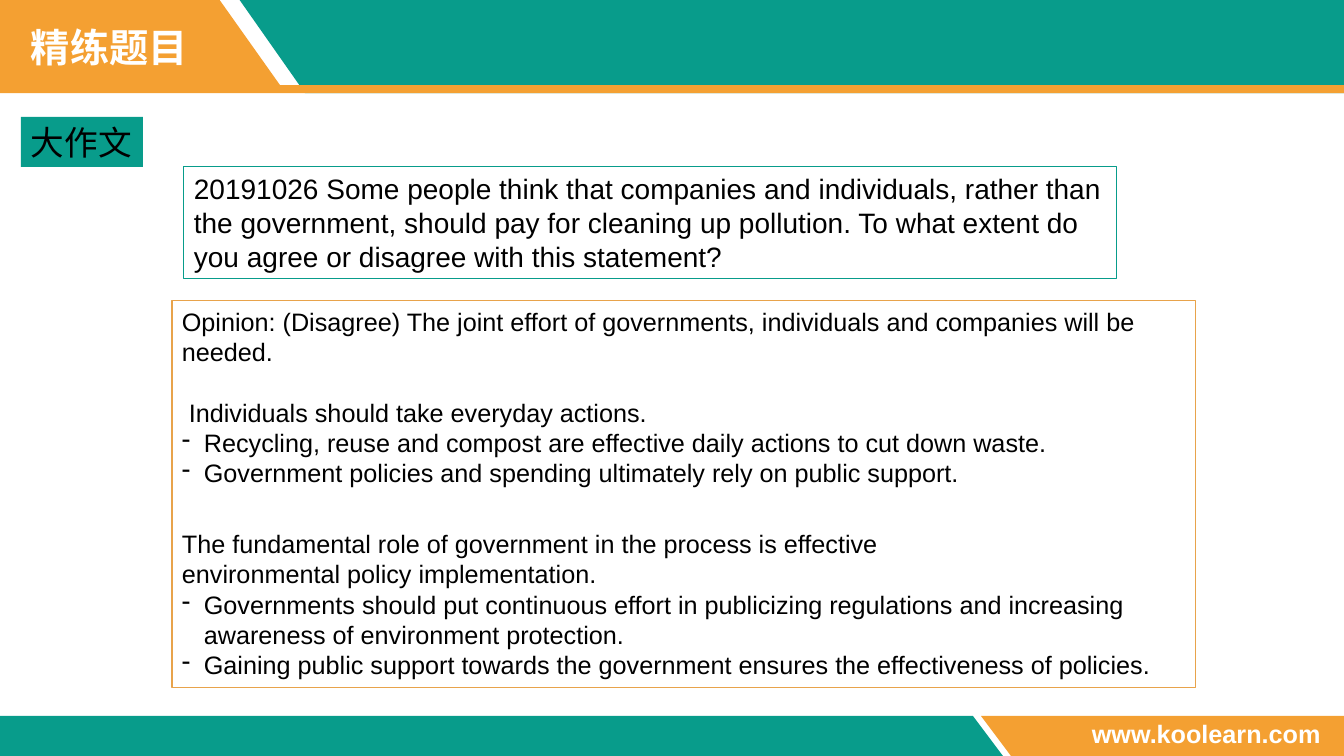
from pptx import Presentation
from pptx.dml.color import RGBColor
from pptx.enum import shapes, text
from pptx.oxml import parse_xml
from pptx.oxml.ns import nsdecls
from pptx.util import Pt

PX = 12192000 / 1344
HUES = {"teal": "089C8B", "gold": "F4A032", "edge": "E8A34B",
        "white": "FFFFFF", "black": "000000"}
BANDS = [
    ("teal", [(239, -1), (305, 93), (1344, 93), (1344, -1)]),
    ("gold", [(-2, -1), (219, -1), (280, 85), (1345, 85), (1345, 93), (-2, 93)]),
    ("teal", [(-2, 716), (973, 716), (1003, 756), (-2, 756)]),
    ("gold", [(981, 716), (1344, 716), (1344, 756), (1011, 756)]),
]
TASK = ("20191026 Some people think that companies and individuals, rather than "
        "the government, should pay for cleaning up pollution. To what extent do "
        "you agree or disagree with this statement?")
PLAN = [
    ("Opinion: (Disagree) The joint effort of governments, individuals and "
     "companies will be needed.", {}),
    ("Individuals should take everyday actions.", {"gap": 22, "indent": 7}),
    ("Recycling, reuse and compost are effective daily actions to cut down waste.",
     {"dash": True}),
    ("Government policies and spending ultimately rely on public support.",
     {"dash": True}),
    ("The fundamental role of government in the process is effective", {"gap": 29}),
    ("environmental policy implementation.", {}),
    ("Governments should put continuous effort in publicizing regulations and "
     "increasing awareness of environment protection.", {"dash": True}),
    ("Gaining public support towards the government ensures the effectiveness "
     "of policies.", {"dash": True}),
]


def emu(px):
    return round(px * PX)


def hue(name):
    return RGBColor.from_string(HUES[name])


def band(slide, color, points):
    build = slide.shapes.build_freeform(*points[0], scale=PX)
    build.add_line_segments(points[1:], close=True)
    shape = build.convert_to_shape()
    shape.shadow.inherit = False
    shape.fill.solid()
    shape.fill.fore_color.rgb = hue(color)
    shape.line.fill.background()


def box(slide, area, fill=None, line=None):
    shape = slide.shapes.add_shape(shapes.MSO_SHAPE.RECTANGLE, *map(emu, area))
    shape.shadow.inherit = False
    if fill:
        shape.fill.solid()
        shape.fill.fore_color.rgb = hue(fill)
    else:
        shape.fill.background()
    if line:
        shape.line.color.rgb = hue(line)
        shape.line.width = Pt(0.75)
    else:
        shape.line.fill.background()
    return shape


def label(slide, area):
    return slide.shapes.add_textbox(*map(emu, area))


def write(shape, rows, size=18, color="black", bold=False, font="Arial",
          wrap=True, pitch=None):
    frame = shape.text_frame
    frame.word_wrap = wrap
    frame.vertical_anchor = text.MSO_ANCHOR.TOP
    for i, (words, style) in enumerate(rows):
        para = frame.paragraphs[0] if i == 0 else frame.add_paragraph()
        para.alignment = text.PP_ALIGN.LEFT
        if pitch:
            para.line_spacing = pitch
        if "gap" in style:
            para.space_before = Pt(style["gap"])
        props = para._p.get_or_add_pPr()
        if "indent" in style:
            props.set("indent", str(emu(style["indent"])))
        if style.get("dash"):
            props.set("marL", str(emu(22)))
            props.set("indent", str(emu(-22)))
            props.append(parse_xml(f'<a:buChar {nsdecls("a")} char="-"/>'))
        run = para.add_run()
        run.text = words
        run.font.name = font
        run.font.size = Pt(size)
        run.font.bold = bold
        run.font.color.rgb = hue(color)


def main():
    deck = Presentation()
    deck.slide_width, deck.slide_height = emu(1344), emu(756)
    slide = deck.slides.add_slide(deck.slide_layouts[6])
    for color, points in BANDS:
        band(slide, color, points)
    write(label(slide, (1082, 713, 251, 40)), [("www.koolearn.com", {})],
          color="white", bold=True, wrap=False)
    write(label(slide, (21, 18, 178, 57)), [("精练题目", {})], size=28,
          color="white", bold=True, font="Montserrat", wrap=False)
    write(box(slide, (21, 117, 122, 50), fill="teal"), [("大作文", {})],
          size=24, wrap=False)
    write(box(slide, (184, 167, 933, 112), line="teal"), [(TASK, {})], size=20)
    write(box(slide, (172, 301, 1024, 387), line="edge"), PLAN)
    deck.save("out.pptx")


if __name__ == "__main__":
    main()
